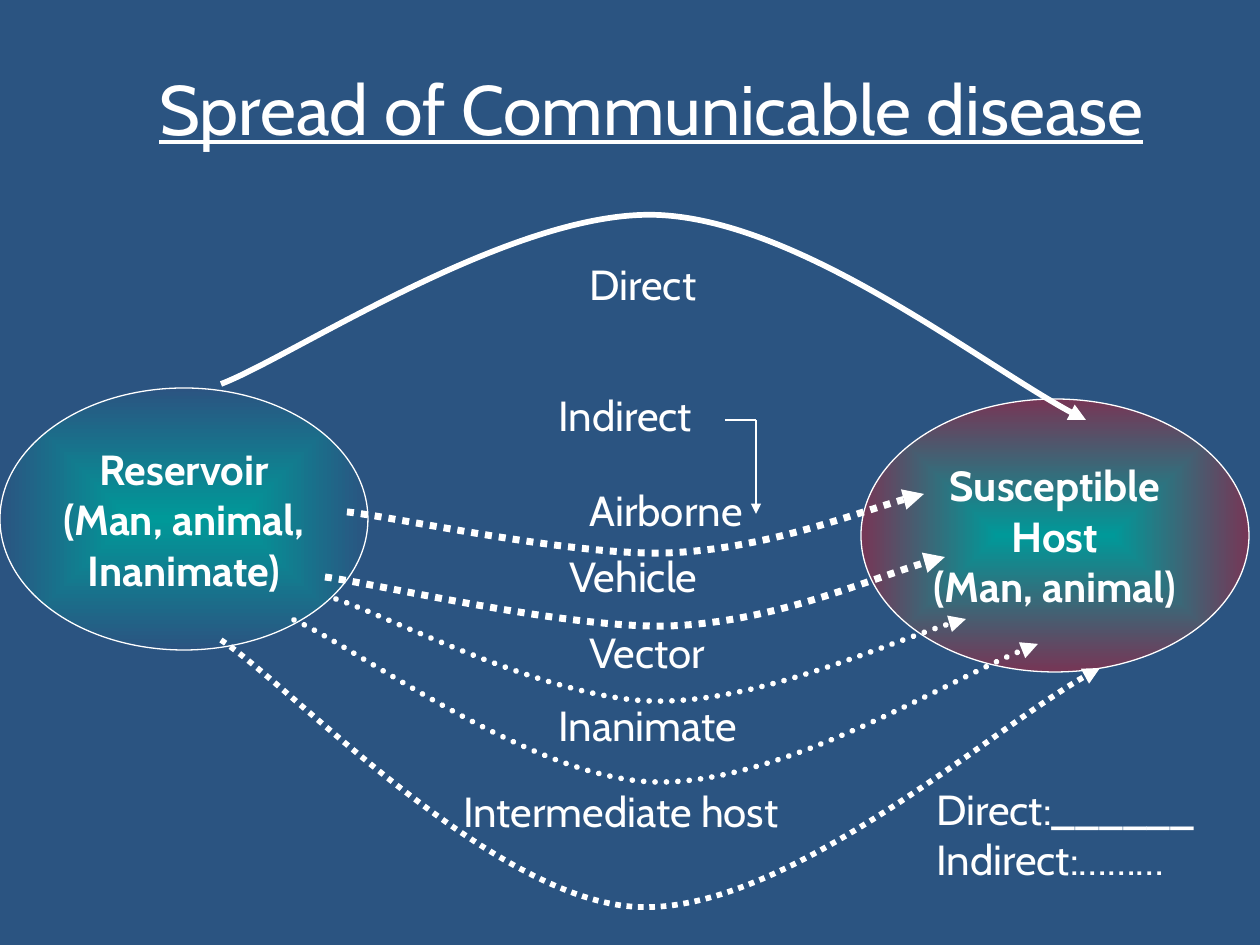
"""Build a slide on the spread of communicable disease."""
from lxml.etree import SubElement
from pptx import Presentation
from pptx.dml.color import RGBColor
from pptx.enum.dml import MSO_LINE
from pptx.enum.shapes import MSO_CONNECTOR, MSO_SHAPE
from pptx.enum.text import MSO_ANCHOR, MSO_AUTO_SIZE, PP_ALIGN
from pptx.oxml.ns import qn
from pptx.util import Emu, Pt

SCALE = 914400 / 126
FONT = "Cabin"
WHITE = "FFFFFF"
NAVY = "2B5481"
TEAL = "009999"
PLUM = "763656"

HOSTS = [
    ((0, 388, 368, 262), NAVY, "Reservoir\n(Man, animal,\nInanimate)"),
    ((861, 399, 388, 273), PLUM, "Susceptible\nHost\n(Man, animal)"),
]
LABELS = [
    ((577, 252, 134, 63), "Direct"),
    ((546, 383, 168, 63), "Indirect"),
    ((577, 478, 181, 63), "Airborne"),
    ((557, 544, 189, 63), "Vehicle"),
    ((577, 620, 144, 63), "Vector"),
    ((546, 693, 213, 63), "Inanimate"),
    ((451, 779, 357, 63), "Intermediate host"),
    ((924, 777, 287, 113), "Direct:______\nIndirect:………"),
]
DIRECT_ROUTE = [(221, 384), (292, 357), (513, 209), (658, 215),
                (801, 221), (997, 377), (1086, 420)]
INDIRECT_ROUTES = [
    (4, "flat", [(347, 512), (401, 518), (572, 556), (668, 553),
                 (765, 549), (871, 507), (924, 494)]),
    (4, "flat", [(325, 577), (383, 585), (567, 629), (670, 626),
                 (774, 622), (888, 571), (945, 557)]),
    (3.25, "rnd", [(336, 599), (388, 616), (546, 698), (651, 701),
                   (756, 704), (901, 636), (966, 619)]),
    (3.25, "rnd", [(294, 620), (354, 646), (529, 778), (653, 782),
                   (777, 786), (959, 673), (1038, 644)]),
    (3.25, "flat", [(221, 640), (290, 685), (494, 903), (640, 907),
                    (786, 912), (1004, 717), (1100, 668)]),
]


def px(value):
    """Turn pixels into EMU."""
    return Emu(round(value * SCALE))


def color(value):
    """Turn a hex string into a colour."""
    return RGBColor.from_string(value)


def style_line(shape, width):
    """Give a shape a plain white line."""
    shape.line.color.rgb = color(WHITE)
    shape.line.width = Pt(width)


def add_arrowhead(shape):
    """Put a triangle at the far end of a line."""
    line = shape.element.spPr.find(qn("a:ln"))
    SubElement(line, qn("a:tailEnd"), type="triangle")


def write_text(shape, text, size, bold=False, underline=False, align=PP_ALIGN.LEFT):
    """Fill a shape with unwrapped white text."""
    frame = shape.text_frame
    frame.text = text
    frame.word_wrap = False
    for paragraph in frame.paragraphs:
        paragraph.alignment = align
        for run in paragraph.runs:
            run.font.name = FONT
            run.font.size = Pt(size)
            run.font.bold = bold
            run.font.underline = underline
            run.font.color.rgb = color(WHITE)


def add_label(slide, box, text, size=24, underline=False):
    """Add a text box that grows with its text."""
    label = slide.shapes.add_textbox(*map(px, box))
    write_text(label, text, size, underline=underline)
    label.text_frame.auto_size = MSO_AUTO_SIZE.SHAPE_TO_FIT_TEXT


def add_host(slide, box, edge, text):
    """Add an ellipse shaded from a teal centre to its edge colour."""
    host = slide.shapes.add_shape(MSO_SHAPE.OVAL, *map(px, box))
    host.shadow.inherit = False
    host.fill.gradient()
    for stop, shade in zip(host.fill.gradient_stops, (TEAL, edge)):
        stop.color.rgb = color(shade)
    gradient = host.element.spPr.find(qn("a:gradFill"))
    gradient.remove(gradient.find(qn("a:lin")))
    center = SubElement(gradient, qn("a:path"), path="shape")
    SubElement(center, qn("a:fillToRect"), l="50000", t="50000", r="50000", b="50000")
    style_line(host, 0.75)
    write_text(host, text, 24, bold=True, align=PP_ALIGN.CENTER)
    host.text_frame.vertical_anchor = MSO_ANCHOR.MIDDLE


def add_route(slide, points, width, dash=None, cap="flat"):
    """Add an arrow along cubic curves through start, control and end points."""
    builder = slide.shapes.build_freeform(*points[0], scale=SCALE)
    builder.add_line_segments(points[1:], close=False)
    route = builder.convert_to_shape()
    outline = next(route.element.iter(qn("a:path")))
    segments = outline.findall(qn("a:lnTo"))
    for start in range(0, len(segments), 3):
        curve = SubElement(outline, qn("a:cubicBezTo"))
        for segment in segments[start:start + 3]:
            curve.append(segment[0])
            outline.remove(segment)
    route.shadow.inherit = False
    route.fill.background()
    style_line(route, width)
    route.line.dash_style = dash
    route.element.spPr.find(qn("a:ln")).set("cap", cap)
    add_arrowhead(route)


def add_straight(slide, start, end):
    """Add a thin straight line and return it."""
    line = slide.shapes.add_connector(
        MSO_CONNECTOR.STRAIGHT, *map(px, start + end))
    style_line(line, 0.75)
    SubElement(line.element.spPr, qn("a:effectLst"))
    return line


def main():
    """Build and save the slide."""
    presentation = Presentation()
    presentation.slide_width, presentation.slide_height = px(1260), px(945)
    slide = presentation.slides.add_slide(presentation.slide_layouts[6])
    slide.background.fill.solid()
    slide.background.fill.fore_color.rgb = color(NAVY)

    for box, edge, text in HOSTS:
        add_host(slide, box, edge, text)
    add_route(slide, DIRECT_ROUTE, 3.25)
    for width, cap, points in INDIRECT_ROUTES:
        add_route(slide, points, width, MSO_LINE.ROUND_DOT, cap)
    add_label(slide, (147, 59, 1046, 97), "Spread of Communicable disease", 40, True)
    for box, text in LABELS:
        add_label(slide, box, text)
    corner = (756, 420)
    add_straight(slide, (725, 420), corner)
    add_arrowhead(add_straight(slide, corner, (756, 514)))

    presentation.save("out.pptx")


if __name__ == "__main__":
    main()
